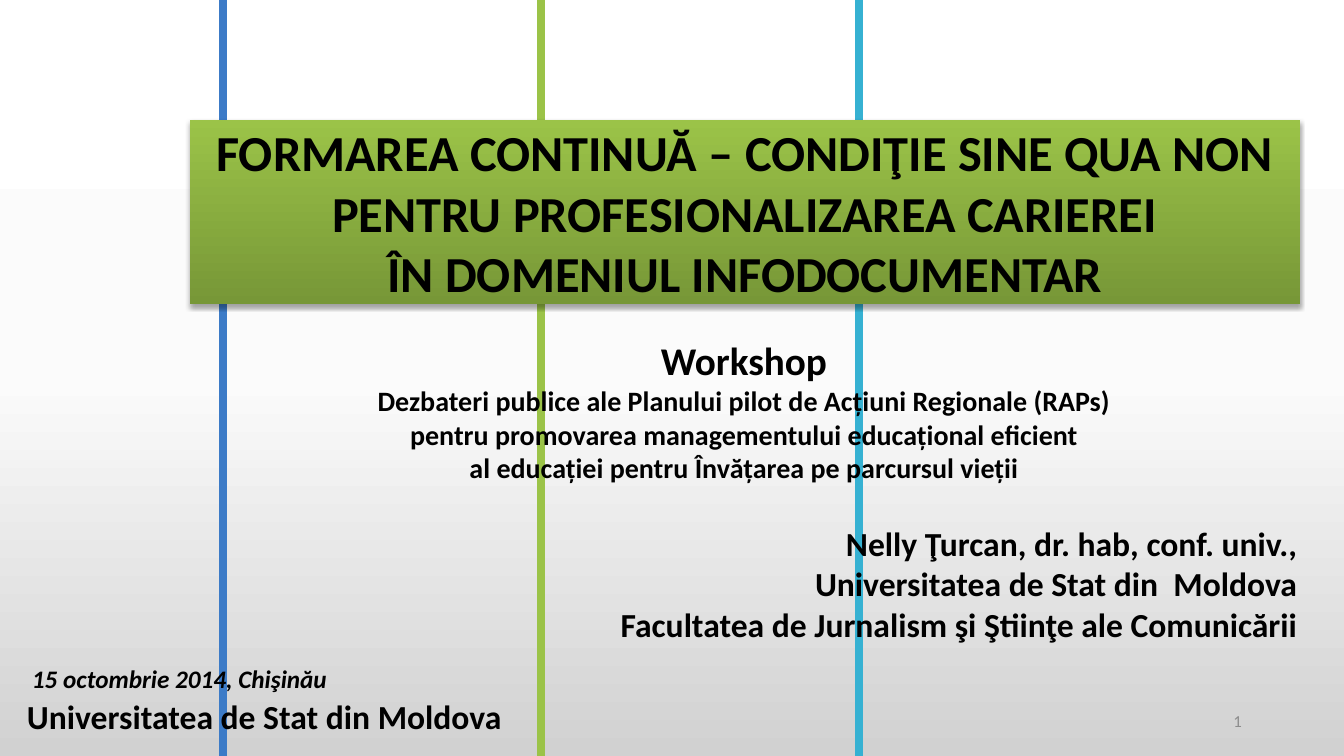
from collections import namedtuple
from copy import deepcopy
from dataclasses import dataclass

from lxml.etree import SubElement
from pptx import Presentation
from pptx.dml.color import RGBColor
from pptx.enum.shapes import MSO_CONNECTOR
from pptx.enum.text import MSO_ANCHOR, MSO_AUTO_SIZE, PP_ALIGN
from pptx.oxml import parse_xml
from pptx.oxml.ns import nsdecls, qn
from pptx.util import Pt

Box = namedtuple("Box", "left top width height")


@dataclass(frozen=True)
class Theme:
    """Colours, font and type sizes of the slide."""
    font: str = "Calibri"
    ink: str = "000000"
    muted: str = "8C8C8C"
    stripes: tuple = ("3C7BC7", "9BC348", "36B1D2")
    page: tuple = ((0, "FFFFFF"), (0.5, "FBFBFB"), (1, "D1D1D1"))
    banner: tuple = ((0, "779737"), (1, "9BC348"))
    title: int = 36
    heading: int = 28
    large: int = 24
    body: int = 20
    date: int = 18
    number: int = 12


THEME = Theme()


def paint_gradient(fill, element, stops, angle):
    """Fill with a linear gradient through the given stops."""
    fill.gradient()
    fill.gradient_angle = angle
    stop_list = next(element.iter(qn("a:gsLst")))
    for _ in stops[2:]:
        stop_list.append(deepcopy(stop_list[0]))
    for stop, (position, color) in zip(fill.gradient_stops, stops):
        stop.position = position
        stop.color.rgb = RGBColor.from_string(color)


def place(shape, box):
    """Move a shape into a box."""
    shape.left, shape.top, shape.width, shape.height = map(Pt, box)


def style_font(font, size, color=THEME.ink, bold=True, italic=False):
    """Apply the theme font with a size, colour and weight."""
    font.name, font.size, font.bold, font.italic = THEME.font, Pt(size), bold, italic
    font.color.rgb = RGBColor.from_string(color)


def write_lines(shape, lines, sizes, alignment, anchor=MSO_ANCHOR.TOP, wrap=True, italic=False):
    """Write one paragraph per line, each in its own size."""
    frame = shape.text_frame
    frame.text = "\n".join(lines)
    frame.word_wrap = wrap
    frame.auto_size = MSO_AUTO_SIZE.NONE
    frame.vertical_anchor = anchor
    for paragraph, size in zip(frame.paragraphs, sizes):
        paragraph.alignment = alignment
        paragraph.space_before = Pt(0)
        for run in paragraph.runs:
            style_font(run.font, size, italic=italic)


def add_stripes(slide, box):
    """Draw evenly spaced vertical stripes behind everything else."""
    gap = box.width / (len(THEME.stripes) - 1)
    for index, color in enumerate(THEME.stripes):
        x = Pt(box.left + index * gap)
        stripe = slide.shapes.add_connector(
            MSO_CONNECTOR.STRAIGHT, x, Pt(box.top), x, Pt(box.top + box.height))
        stripe.line.color.rgb = RGBColor.from_string(color)
        stripe.line.width = Pt(6)
        SubElement(stripe.element.spPr, qn("a:effectLst"))
        slide.shapes.element.insert(2 + index, stripe.element)


def add_banner(slide, box):
    """Place the title on a shaded green banner."""
    title = slide.shapes.title
    place(title, box)
    paint_gradient(title.fill, title.element, THEME.banner, 90)
    title.element.spPr.append(parse_xml(
        f'<a:effectLst {nsdecls("a")}><a:outerShdw blurRad="{Pt(3.1)}" dist="{Pt(1.8)}" '
        'dir="5400000" rotWithShape="0"><a:srgbClr val="000000"><a:alpha val="35000"/>'
        '</a:srgbClr></a:outerShdw></a:effectLst>'))
    lines = ["FORMAREA CONTINUĂ – CONDIŢIE SINE QUA NON PENTRU PROFESIONALIZAREA CARIEREI",
             "ÎN DOMENIUL INFODOCUMENTAR"]
    write_lines(title, lines, [THEME.title] * 2, PP_ALIGN.CENTER, MSO_ANCHOR.MIDDLE)


def add_workshop(slide, box):
    """Place the workshop heading and its description."""
    subtitle = slide.placeholders[1]
    place(subtitle, box)
    lines = ["Workshop",
             "Dezbateri publice ale Planului pilot de Acțiuni Regionale (RAPs)",
             "pentru promovarea managementului educațional eficient",
             "al educației pentru Învățarea pe parcursul vieții"]
    write_lines(subtitle, lines, [THEME.heading] + [THEME.body] * 3, PP_ALIGN.CENTER)


def add_author(slide, box):
    """Add the author and affiliation, aligned right."""
    author = slide.shapes.add_textbox(*map(Pt, box))
    lines = ["Nelly Ţurcan, dr. hab, conf. univ.,",
             "Universitatea de Stat din  Moldova",
             "Facultatea de Jurnalism şi Ştiinţe ale Comunicării"]
    write_lines(author, lines, [THEME.large] * 3, PP_ALIGN.RIGHT)


def add_venue(slide, box):
    """Add the host university with the date and place above it."""
    host_top = box.top + 23
    host = slide.shapes.add_textbox(Pt(box.left), Pt(host_top), Pt(box.width), Pt(36))
    write_lines(host, ["Universitatea de Stat din Moldova"], [THEME.large], PP_ALIGN.LEFT)
    date = slide.shapes.add_textbox(Pt(box.left + 3.6), Pt(box.top), Pt(227.5), Pt(29))
    write_lines(date, ["15 octombrie 2014, Chişinău"], [THEME.date], PP_ALIGN.LEFT,
                wrap=False, italic=True)


def add_slide_number(slide, box):
    """Add the slide number as a live field."""
    number = slide.shapes.add_textbox(*map(Pt, box))
    number.text_frame.word_wrap = True
    number.text_frame.vertical_anchor = MSO_ANCHOR.MIDDLE
    paragraph = number.text_frame.paragraphs[0]
    paragraph.alignment = PP_ALIGN.RIGHT
    run = paragraph.add_run()
    run.text = "1"
    style_font(run.font, THEME.number, THEME.muted, bold=False)
    field = parse_xml(f'<a:fld {nsdecls("a")} type="slidenum" '
                      'id="{B6F15528-21DE-4FAA-801E-634DDDAF4B2B}"/>')
    text_run = paragraph.runs[0].font
    element = number.element.find(".//" + qn("a:r"))
    element.addprevious(field)
    field.extend(list(element))
    element.getparent().remove(element)


def add_title_slide(presentation, box):
    """Build the opening slide of the talk."""
    slide = presentation.slides.add_slide(presentation.slide_layouts[0])
    paint_gradient(slide.background.fill, slide.element, THEME.page, 270)
    add_stripes(slide, Box(box.left + 159.2, box.top, 454.2, box.height))
    add_banner(slide, Box(box.left + 135.4, box.top + 85.7, 793.4, 131.8))
    add_author(slide, Box(box.left + 432, box.top + 370, 501.8, 94.3))
    add_venue(slide, Box(box.left + 12.2, box.top + 470.2, 450, 59))
    add_slide_number(slide, Box(box.left + 678.2, box.top + 500.4, 216, 28.8))
    add_workshop(slide, Box(box.left + 233.3, box.top + 236.9, 596.2, 113.8))


def main():
    """Create and save the presentation."""
    presentation = Presentation()
    presentation.slide_width, presentation.slide_height = Pt(960), Pt(540)
    add_title_slide(presentation, Box(0, 0, 960, 540))
    presentation.save("out.pptx")


if __name__ == "__main__":
    main()
